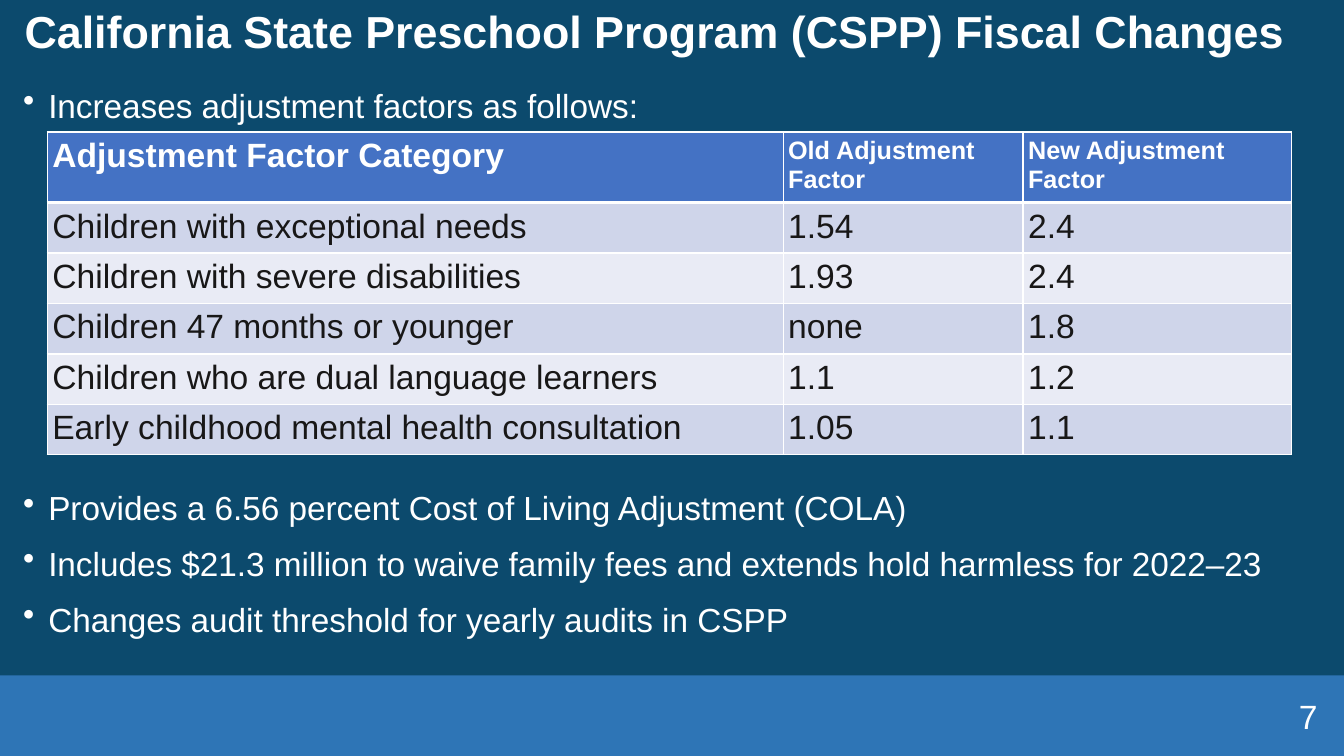
from dataclasses import dataclass

from lxml import etree
from pptx import Presentation
from pptx.dml.color import RGBColor
from pptx.enum import shapes, text
from pptx.oxml import ns
from pptx.util import Pt

COLORS = {
    "background": "0C4A6D",
    "band": "2E75B6",
    "white": "FFFFFF",
    "header": "4472C4",
    "odd": "CFD5EA",
    "even": "E9EBF5",
    "ink": "181717",
}
FONT = "Arial"
TABLE_BOX = (33.8, 94.3, 888.5, 230.4)
COLUMN_WIDTHS = (525.6, 171.4, 191.5)
HEADER_HEIGHT, ROW_HEIGHT = 50.4, 36
CELL_MARGIN = 3.6
BULLET_INDENT = 18


@dataclass
class Bullet:
    text: str
    before: float = 5.6


@dataclass
class Factor:
    category: str
    old: str
    new: str


HEADER = Factor("Adjustment Factor Category", "Old Adjustment\nFactor", "New Adjustment\nFactor")
FACTORS = [
    Factor("Children with exceptional needs", "1.54", "2.4"),
    Factor("Children with severe disabilities", "1.93", "2.4"),
    Factor("Children 47 months or younger", "none", "1.8"),
    Factor("Children who are dual language learners", "1.1", "1.2"),
    Factor("Early childhood mental health consultation", "1.05", "1.1"),
]
BULLETS = [
    Bullet("Increases adjustment factors as follows:", 0),
    Bullet("Provides a 6.56 percent Cost of Living Adjustment (COLA)", 253.4),
    Bullet("Includes $21.3 million to waive family fees and extends hold harmless for 2022–23"),
    Bullet("Changes audit threshold for yearly audits in CSPP"),
]


def rgb(name: str) -> RGBColor:
    return RGBColor.from_string(COLORS[name])


def set_font(p, size: float, color: str = "white", bold: bool = False) -> None:
    p.font.name = FONT
    p.font.size = Pt(size)
    p.font.bold = bold
    p.font.color.rgb = rgb(color)


def add_band(slide) -> None:
    sp = slide.shapes.add_shape(
        shapes.MSO_SHAPE.RECTANGLE, Pt(0), Pt(482.4), Pt(960), Pt(57.6))
    sp.shadow.inherit = False
    sp.fill.solid()
    sp.fill.fore_color.rgb = rgb("band")
    sp.line.fill.background()


def set_title(slide, title: str) -> None:
    sp = slide.shapes.title
    sp.left, sp.top, sp.width, sp.height = Pt(0), Pt(-28), Pt(936), Pt(104.4)
    tf = sp.text_frame
    tf.text = title
    tf.word_wrap = True
    tf.vertical_anchor = text.MSO_ANCHOR.MIDDLE
    p = tf.paragraphs[0]
    p.alignment = text.PP_ALIGN.CENTER
    p.line_spacing = 0.9
    set_font(p, 32, bold=True)


def add_bullets(slide, bullets: list[Bullet]) -> None:
    tf = slide.shapes.add_textbox(Pt(9.4), Pt(57), Pt(928.8), Pt(420)).text_frame
    tf.word_wrap = True
    tf.text = "\n".join(b.text for b in bullets)
    for p, bullet in zip(tf.paragraphs, bullets):
        p.space_before, p.space_after = Pt(bullet.before), Pt(5.6)
        set_font(p, 23.8)
        pPr = p._p.get_or_add_pPr()
        pPr.set("marL", str(Pt(BULLET_INDENT)))
        pPr.set("indent", str(-Pt(BULLET_INDENT)))
        mark = etree.Element(ns.qn("a:buChar"), char="•")
        pPr.insert_element_before(mark, "a:tabLst", "a:defRPr", "a:extLst")


def set_borders(cell, top: float, bottom: float) -> None:
    tcPr = cell._tc.get_or_add_tcPr()
    for side, width in {"L": 1, "R": 1, "T": top, "B": bottom}.items():
        ln = etree.SubElement(tcPr, ns.qn(f"a:ln{side}"), w=str(Pt(width)))
        fill = etree.SubElement(ln, ns.qn("a:solidFill"))
        etree.SubElement(fill, ns.qn("a:srgbClr"), val=COLORS["white"])


def add_factor_table(slide, header: Factor, factors: list[Factor]) -> None:
    table = slide.shapes.add_table(
        len(factors) + 1, len(COLUMN_WIDTHS), *map(Pt, TABLE_BOX)).table
    for column, width in zip(table.columns, COLUMN_WIDTHS):
        column.width = Pt(width)
    for i, factor in enumerate([header, *factors]):
        is_header = i == 0
        table.rows[i].height = Pt(HEADER_HEIGHT if is_header else ROW_HEIGHT)
        fill = "header" if is_header else "odd" if i % 2 else "even"
        for j, value in enumerate((factor.category, factor.old, factor.new)):
            cell = table.cell(i, j)
            cell.text = value
            cell.margin_left = cell.margin_right = Pt(CELL_MARGIN)
            cell.margin_top = cell.margin_bottom = Pt(CELL_MARGIN)
            set_borders(cell, 3 if i == 1 else 1, 3 if is_header else 1)
            cell.fill.solid()
            cell.fill.fore_color.rgb = rgb(fill)
            for p in cell.text_frame.paragraphs:
                set_font(p, 18 if is_header and j else 24,
                         "white" if is_header else "ink", is_header)


def add_page_number(slide, number: str) -> None:
    tf = slide.shapes.add_textbox(Pt(732.2), Pt(496.8), Pt(216), Pt(28.8)).text_frame
    tf.word_wrap = True
    tf.vertical_anchor = text.MSO_ANCHOR.MIDDLE
    tf.text = number
    p = tf.paragraphs[0]
    p.alignment = text.PP_ALIGN.RIGHT
    set_font(p, 24)


def main() -> None:
    prs = Presentation()
    prs.slide_width, prs.slide_height = Pt(960), Pt(540)
    slide = prs.slides.add_slide(prs.slide_layouts.get_by_name("Title Only"))
    slide.background.fill.solid()
    slide.background.fill.fore_color.rgb = rgb("background")
    add_band(slide)
    set_title(slide, "California State Preschool Program (CSPP) Fiscal Changes")
    add_bullets(slide, BULLETS)
    add_factor_table(slide, HEADER, FACTORS)
    add_page_number(slide, "7")
    prs.save("out.pptx")


if __name__ == "__main__":
    main()
